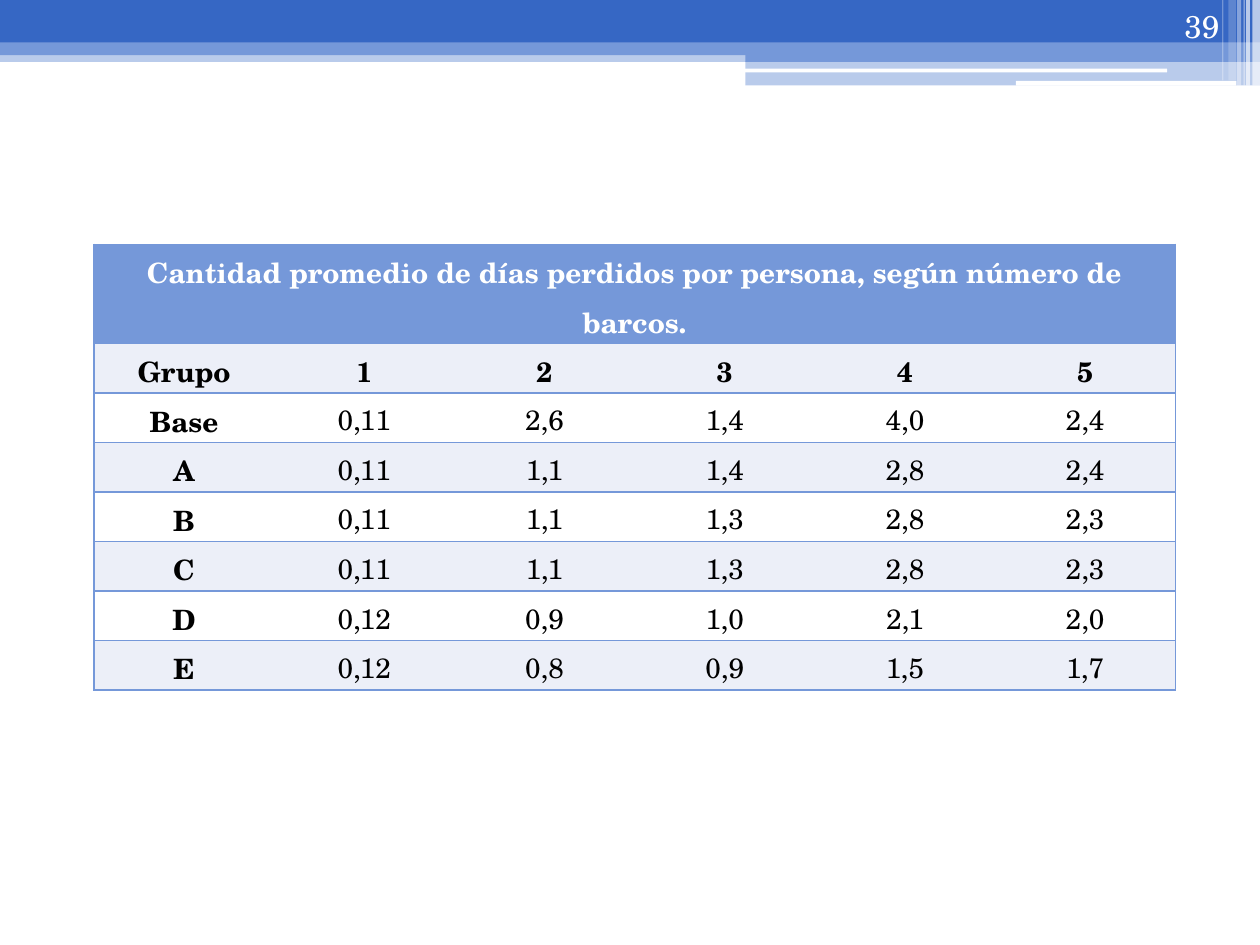
"""Builds the slide with the table of average days lost per person."""
from dataclasses import dataclass

from lxml.etree import SubElement as Sub
from pptx import Presentation as Deck
from pptx.dml.color import RGBColor as Rgb
from pptx.enum.shapes import MSO_SHAPE as Kind
from pptx.enum.text import MSO_ANCHOR as Anchor, PP_ALIGN as Align
from pptx.oxml.ns import qn
from pptx.util import Pt


@dataclass(frozen=True)
class Theme:
    font: str = "TeX Gyre Schola"
    deep: str = "3667C4"
    mid: str = "7598D9"
    pale: str = "ECEFF8"
    white: str = "FFFFFF"
    black: str = "000000"
    page: float = 18
    body: float = 16
    rule: float = 1


def write(frame, text, font, size, color, bold=False, align=Align.CENTER, space=None):
    para = frame.paragraphs[0]
    para.alignment = align
    para.line_spacing = space
    run = para.add_run()
    run.text = text
    run.font.name = font
    run.font.size = Pt(size)
    run.font.bold = bold
    run.font.color.rgb = Rgb.from_string(color)


class Maker:
    def __init__(self, slide, theme):
        self.slide = slide
        self.theme = theme

    def bar(self, box, color, alpha=100, kind=Kind.RECTANGLE):
        shape = self.slide.shapes.add_shape(kind, *map(Pt, box))
        shape.shadow.inherit = False
        shape.line.fill.background()
        shape.fill.solid()
        shape.fill.fore_color.rgb = Rgb.from_string(color)
        if alpha < 100:
            tint = shape.fill._xPr.find(".//" + qn("a:srgbClr"))
            Sub(tint, qn("a:alpha"), val=str(alpha * 1000))

    def label(self, box, text):
        frame = self.slide.shapes.add_textbox(*map(Pt, box)).text_frame
        frame.word_wrap = True
        frame.vertical_anchor = Anchor.BOTTOM
        look = self.theme
        write(frame, text, look.font, look.page, look.white, align=Align.RIGHT)

    def edge(self, cell, sides):
        props = cell._tc.get_or_add_tcPr()
        for side in "LRTB":
            line = Sub(props, qn("a:ln" + side), w=str(Pt(self.theme.rule)))
            if side in sides:
                fill = Sub(line, qn("a:solidFill"))
                Sub(fill, qn("a:srgbClr"), val=self.theme.mid)
            else:
                Sub(line, qn("a:noFill"))

    def cell(self, cell, text, fill, color, bold, sides):
        cell.margin_left = cell.margin_right = Pt(5)
        cell.margin_top = cell.margin_bottom = 0
        self.edge(cell, sides)
        cell.fill.solid()
        cell.fill.fore_color.rgb = Rgb.from_string(fill)
        if text:
            look = self.theme
            write(cell.text_frame, text, look.font, look.body, color, bold, space=1.15)

    def grid(self, spot, width, title, rows, head, step):
        look = self.theme
        wide = len(rows[0])
        box = (*spot, width, head + step * len(rows))
        shape = self.slide.shapes.add_table(len(rows) + 1, wide, *map(Pt, box))
        table = shape.table
        for col in table.columns:
            col.width = Pt(width / wide)
        for num, row in enumerate(table.rows):
            row.height = Pt(step if num else head)
        for col in range(wide):
            self.cell(table.cell(0, col), "" if col else title,
                      look.mid, look.white, True, "LRTB")
        table.cell(0, 0).merge(table.cell(0, wide - 1))
        for num, row in enumerate(rows, 1):
            fill = look.pale if num % 2 else look.white
            for col, text in enumerate(row):
                sides = "TB" + "L" * (col == 0) + "R" * (col == wide - 1)
                bold = num == 1 or col == 0
                self.cell(table.cell(num, col), text, fill, look.black, bold, sides)


def main():
    deck = Deck()
    deck.slide_width, deck.slide_height = Pt(720), Pt(540)
    look = Theme()
    make = Maker(deck.slides.add_slide(deck.slide_layouts[6]), look)

    bands = [
        ((0, 28.8, 720, 6.6), look.mid, 50),
        ((0, 0, 720, 24.5), look.deep, 100),
        ((0, 24.3, 720, 7.2), look.mid, 100),
        ((426, 28, 294, 7.4), look.mid, 100),
        ((426, 35, 294, 13.8), look.mid, 50),
    ]
    for box, color, alpha in bands:
        make.bar(box, color, alpha)
    for box in [(425.5, 39.2, 241.5, 2.2), (580.5, 46.2, 126, 2.7)]:
        make.bar(box, look.white, kind=Kind.ROUNDED_RECTANGLE)

    stripes = [
        (715.7, 4.3, 49, 65), (712.1, 2.2, 49, 65), (710.6, 0.7, 49, 60),
        (707, 2.2, 49, 40), (702, 4.3, 46, 20), (698.4, 0.7, 46, 30),
    ]
    for left, width, height, alpha in stripes:
        make.bar((left, 0, width, height), look.white, alpha)

    make.label((644, 0.4, 59.8, 28.8), "39")

    rows = [
        ("Grupo", "1", "2", "3", "4", "5"),
        ("Base", "0,11", "2,6", "1,4", "4,0", "2,4"),
        ("A", "0,11", "1,1", "1,4", "2,8", "2,4"),
        ("B", "0,11", "1,1", "1,3", "2,8", "2,3"),
        ("C", "0,11", "1,1", "1,3", "2,8", "2,3"),
        ("D", "0,12", "0,9", "1,0", "2,1", "2,0"),
        ("E", "0,12", "0,8", "0,9", "1,5", "1,7"),
    ]
    title = "Cantidad promedio de días perdidos por persona, según número de barcos."
    make.grid((53.7, 139.7), 618, title, rows, 56.7, 28.3)
    deck.save("out.pptx")


if __name__ == "__main__":
    main()
